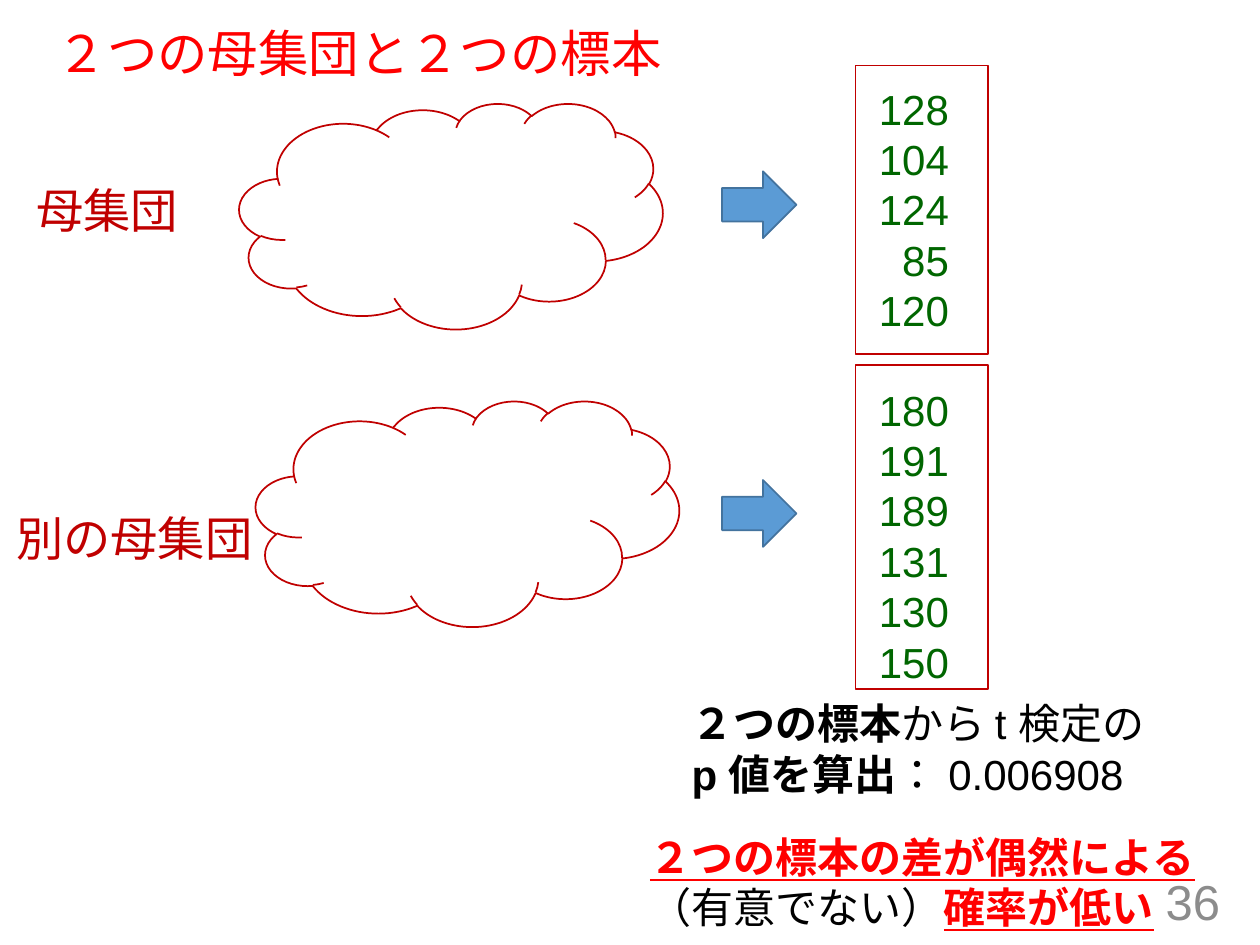
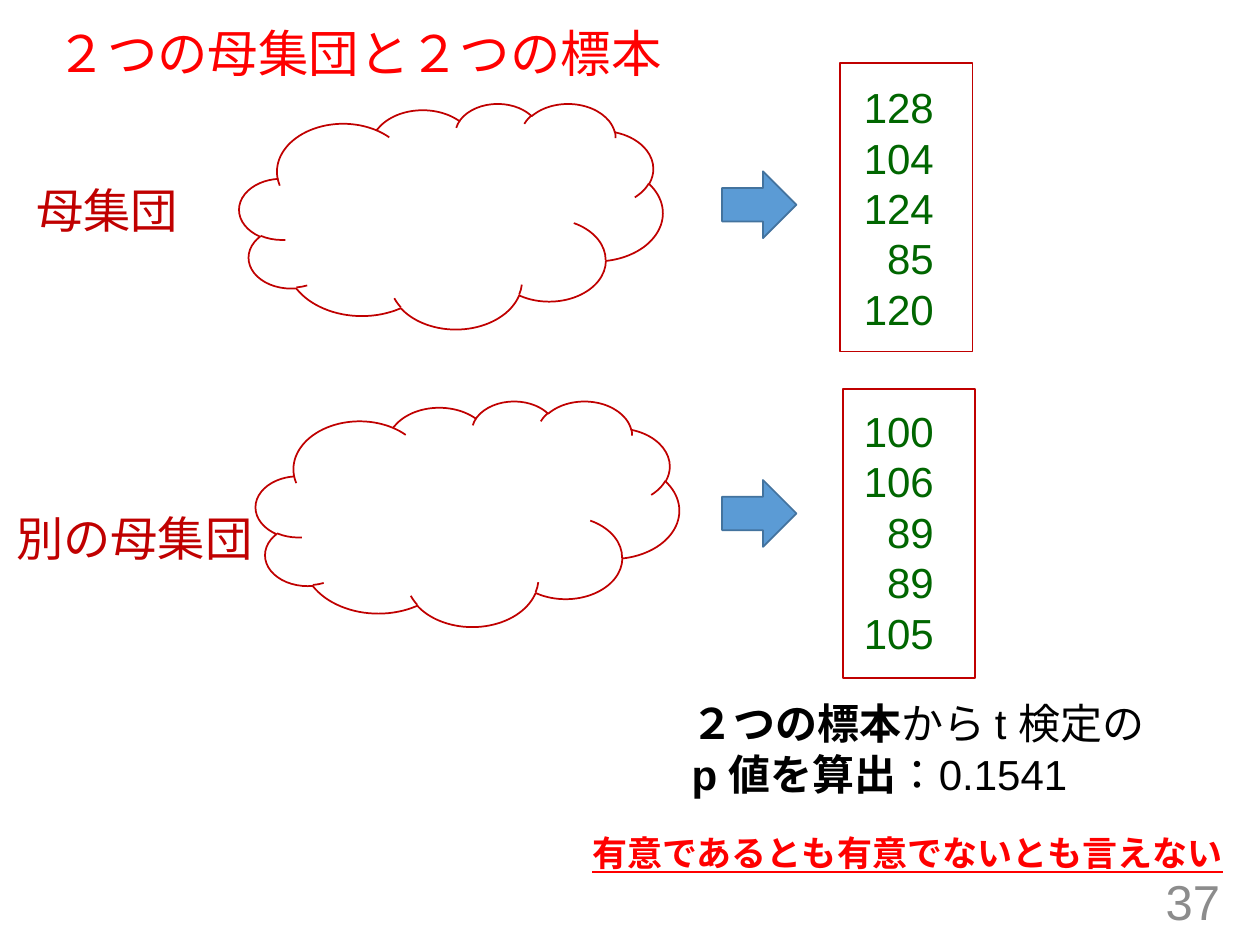
from pptx import Presentation
from pptx.dml.color import RGBColor
from pptx.enum.lang import MSO_LANGUAGE_ID
from pptx.enum.shapes import MSO_SHAPE
from pptx.enum.text import MSO_ANCHOR, MSO_AUTO_SIZE, PP_ALIGN
from pptx.util import Pt

CLOUD, ARROW, RECT = MSO_SHAPE.CLOUD, MSO_SHAPE.RIGHT_ARROW, MSO_SHAPE.RECTANGLE
LEFT, RIGHT = PP_ALIGN.LEFT, PP_ALIGN.RIGHT
MIDDLE = MSO_ANCHOR.MIDDLE
FIXED = MSO_AUTO_SIZE.NONE
JAPANESE = MSO_LANGUAGE_ID.JAPANESE

RED = RGBColor(0xFF, 0x00, 0x00)
DARK = RGBColor(0xC0, 0x00, 0x00)
GREEN = RGBColor(0x00, 0x66, 0x00)
BLUE = RGBColor(0x5B, 0x9B, 0xD5)
NAVY = RGBColor(0x43, 0x73, 0x9E)
GRAY = RGBColor(0x8C, 0x8C, 0x8C)
BLACK = RGBColor(0x00, 0x00, 0x00)

FONT = "Arial"
TITLE = "２つの母集団と２つの標本"
GROUPS = [
    ("母集団", (13.7, 100), (136.8, 59), 97.9),
    ("別の母集団", (2.2, 287.3), (146.2, 229), 274.3),
]
PLAIN = (BLACK, False, False)
STRONG = (BLACK, True, False)
ALERT = (RED, True, True)


def style(font, size, color, bold=False, under=False, name=FONT):
    font.name = name
    font.size = Pt(size)
    font.bold = bold
    font.underline = under
    font.color.rgb = color
    font.language_id = JAPANESE


def place(shape, left, top, width, height):
    shape.left, shape.top = Pt(left), Pt(top)
    shape.width, shape.height = Pt(width), Pt(height)


def add_shape(slide, kind, left, top, width, height, line, fill=None):
    shape = slide.shapes.add_shape(kind, Pt(left), Pt(top), Pt(width), Pt(height))
    shape.shadow.inherit = False
    shape.line.color.rgb = line
    shape.line.width = Pt(1)
    if fill is None:
        shape.fill.background()
    else:
        shape.fill.solid()
        shape.fill.fore_color.rgb = fill


def add_text(slide, left, top, width, height, lines, size, align=LEFT, name=FONT):
    box = slide.shapes.add_textbox(Pt(left), Pt(top), Pt(width), Pt(height))
    frame = box.text_frame
    frame.word_wrap = True
    for index, parts in enumerate(lines):
        para = frame.paragraphs[0] if index == 0 else frame.add_paragraph()
        para.alignment = align
        para.line_spacing = Pt(size * 1.2)
        for text, look in parts:
            run = para.add_run()
            run.text = text
            style(run.font, size, *look, name=name)
    return frame


def add_title(slide):
    title = slide.shapes.title
    place(title, 25.2, 13.7, 666, 36.7)
    frame = title.text_frame
    frame.text = TITLE
    frame.auto_size = FIXED
    frame.vertical_anchor = MIDDLE
    para = frame.paragraphs[0]
    para.alignment = LEFT
    para.line_spacing = 0.9
    style(para.runs[0].font, 28.8, RED)


def add_group(slide, label, spot, cloud, arrow):
    add_shape(slide, CLOUD, *cloud, 241.9, 128.9, DARK)
    add_shape(slide, ARROW, 412.6, arrow, 42.5, 38.2, NAVY, BLUE)
    add_text(slide, *spot, 155, 40.3, [[(label, (DARK,))]], 27)


def add_sample(slide, frame, spot, values):
    add_shape(slide, RECT, *frame, DARK)
    lines = [[(str(value), (GREEN,))] for value in values]
    height = 28.8 * len(values) + 8
    column = add_text(slide, *spot, 51.1, height, lines, 24, RIGHT)
    column.margin_left = 0


def add_test(slide, value):
    lines = [
        [("２つの標本", STRONG), ("から t 検定の", PLAIN)],
        [("p 値を算出", STRONG), ("：" + value, PLAIN)],
    ]
    add_text(slide, 388.1, 395.3, 315, 65, lines, 24)


def add_page(deck, number, samples, value):
    slide = deck.slides.add_slide(deck.slide_layouts[5])
    add_title(slide)
    page = add_text(slide, 542.2, 500.4, 162, 28.8, [[(str(number), (GRAY,))]], 28, RIGHT)
    page.vertical_anchor = MIDDLE
    for group in GROUPS:
        add_group(slide, *group)
    for sample in samples:
        add_sample(slide, *sample)
    add_test(slide, value)
    return slide


def main():
    deck = Presentation()
    deck.slide_width, deck.slide_height = Pt(720), Pt(540)
    first = [128, 104, 124, 85, 120]

    low = add_page(deck, 36, [
        ((488.9, 37.4, 75.6, 164.9), (498.2, 43.9), first),
        ((488.9, 208.8, 75.6, 185), (498.2, 216), [180, 191, 189, 131, 130, 150]),
    ], " 0.006908")
    add_text(low, 364.3, 471.6, 345, 65, [
        [("２つの標本の差が偶然による", ALERT)],
        [("（有意でない）", PLAIN), ("確率が低い", ALERT)],
    ], 24, name="Calibri")

    high = add_page(deck, 37, [
        ((480.2, 36, 75.6, 164.9), (489.6, 43.2), first),
        ((481.7, 222.5, 75.6, 164.9), (489.6, 228.2), [100, 106, 89, 89, 105]),
    ], "0.1541")
    add_text(high, 331.2, 471.6, 386, 31,
             [[("有意であるとも有意でないとも言えない", ALERT)]], 20)

    deck.save("out.pptx")


if __name__ == "__main__":
    main()
